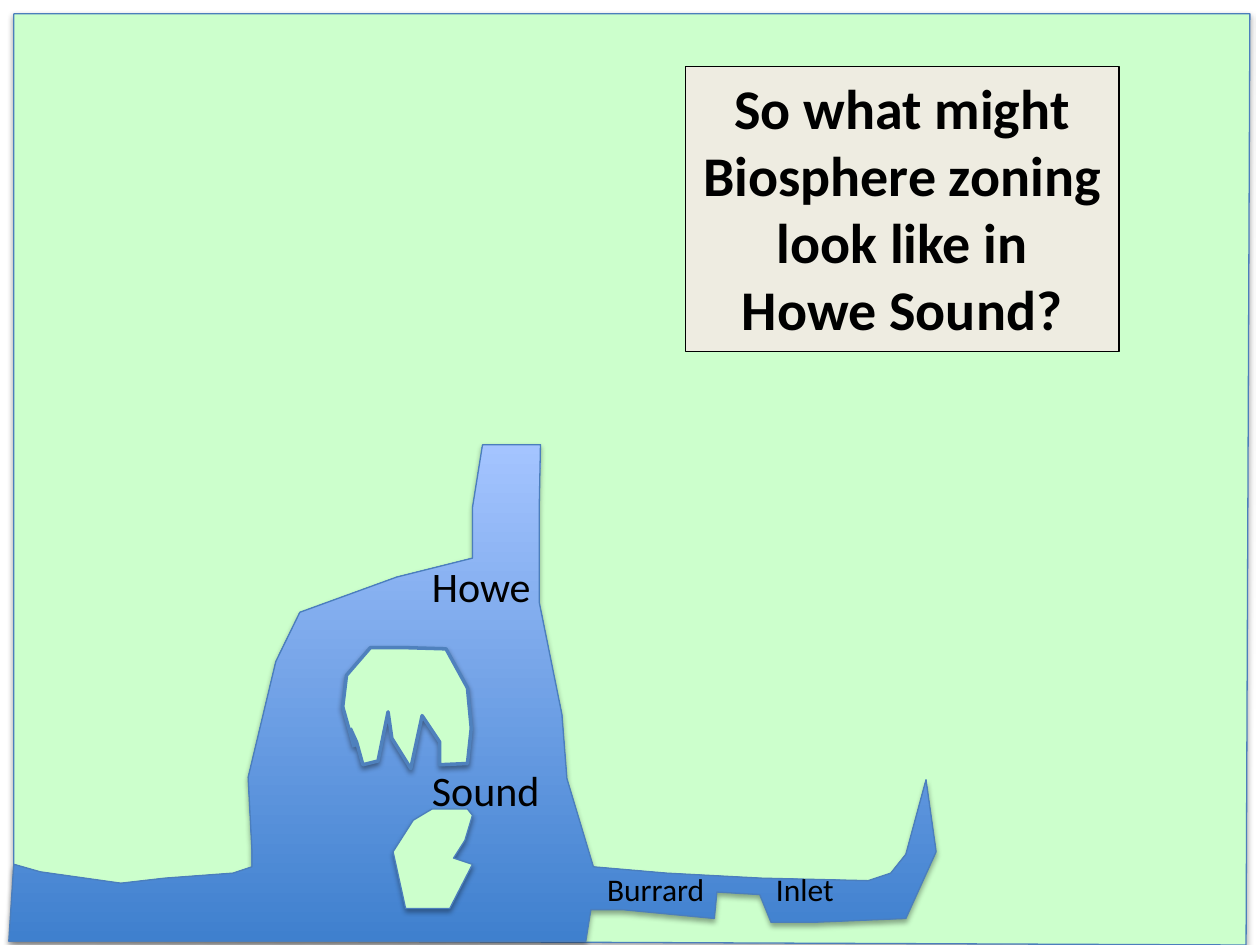
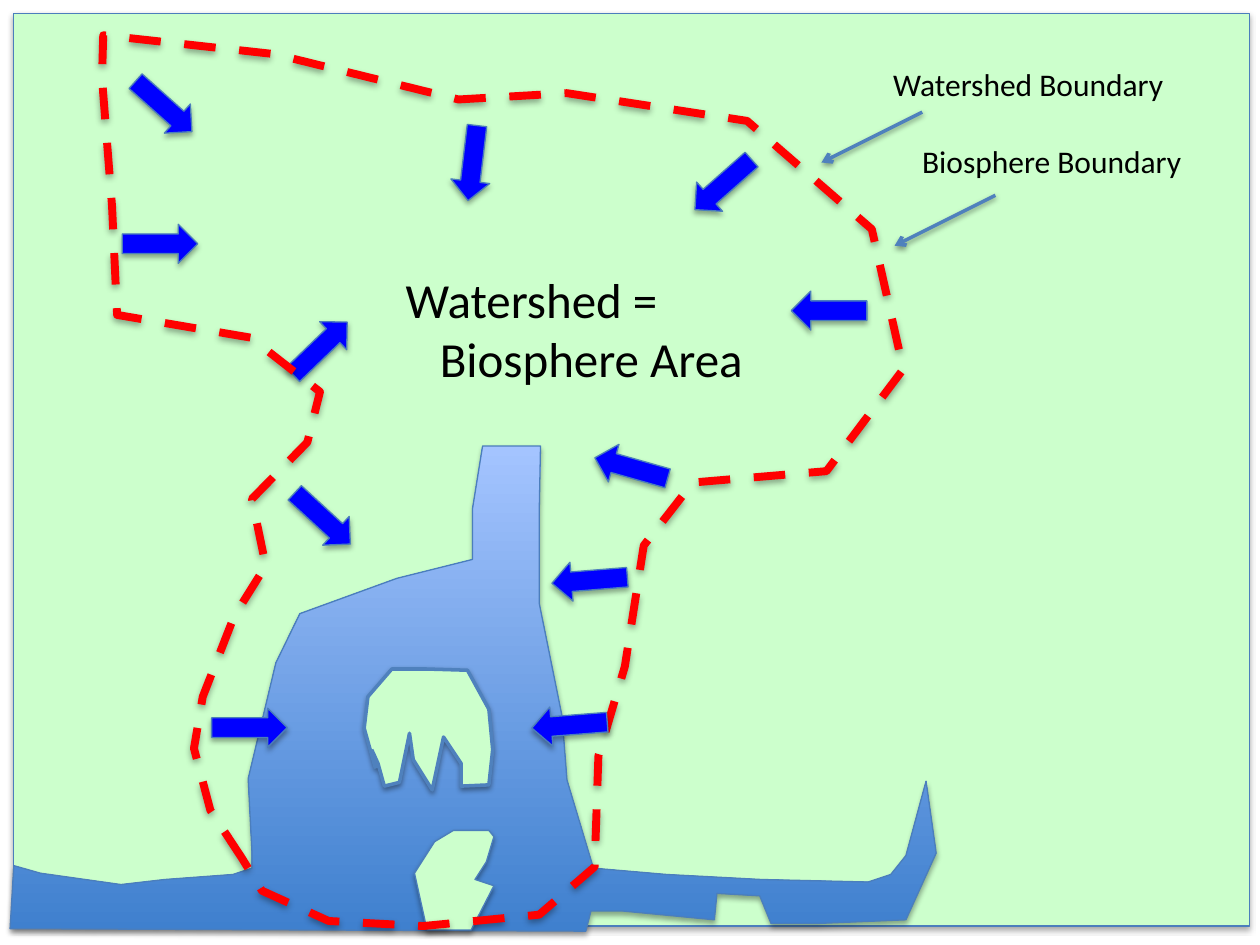
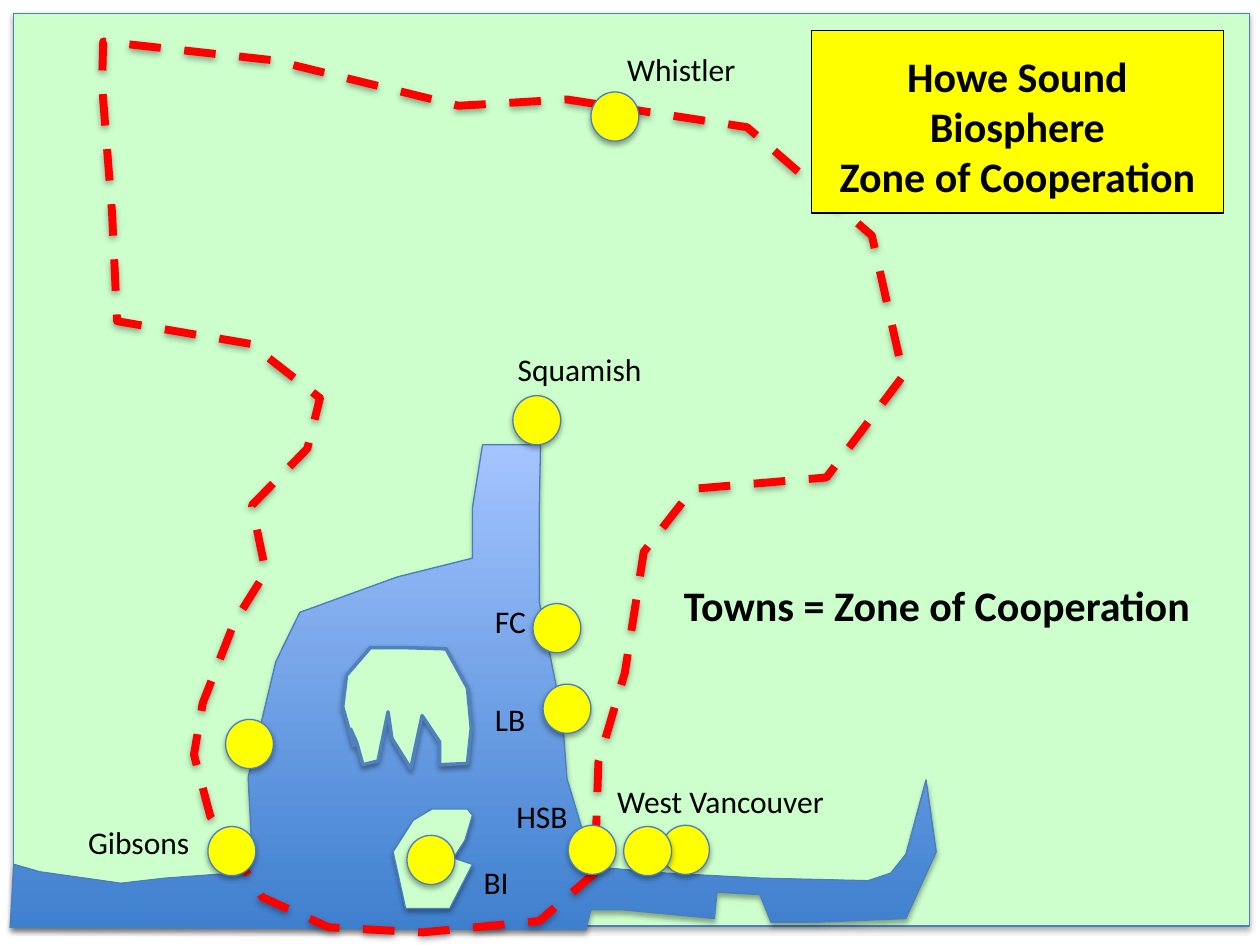
from pptx import Presentation
from pptx.dml.color import RGBColor
from pptx.enum.dml import MSO_LINE
from pptx.enum.shapes import MSO_CONNECTOR, MSO_SHAPE
from pptx.enum.text import MSO_ANCHOR, MSO_AUTO_SIZE, PP_ALIGN
from pptx.oxml import parse_xml
from pptx.oxml.ns import nsdecls
from pptx.util import Cm, Pt

RECT, OVAL, ARROW = MSO_SHAPE.RECTANGLE, MSO_SHAPE.OVAL, MSO_SHAPE.RIGHT_ARROW
LEFT, MID = PP_ALIGN.LEFT, PP_ALIGN.CENTER
TOP, FIXED = MSO_ANCHOR.TOP, MSO_AUTO_SIZE.NONE
STRAIGHT, DASH = MSO_CONNECTOR.STRAIGHT, MSO_LINE.DASH

FONT = "Calibri"
UNIT = 2.54
STEP = Cm(UNIT / 100)
COLORS = {
    "land": "CCFFCC", "deep": "3F80CE", "light": "A4C4FF", "edge": "4B7EBC",
    "coast": "4F81BD", "flow": "0000FF", "bound": "FF0000", "town": "FFFF00",
    "card": "EEECE1", "ink": "000000",
}

# Outlines in hundredths of a map unit
SHORE = [
    (32, 692), (96, 701), (131, 697), (185, 693), (200, 688), (200, 675),
    (197, 617), (219, 525), (238, 486), (315, 458), (375, 443), (375, 403),
    (383, 353), (429, 353), (428, 403), (428, 478), (446, 567), (450, 618),
    (471, 688), (529, 693), (604, 697), (689, 699), (707, 693), (719, 678),
    (735, 619), (743, 676), (719, 729), (647, 732), (612, 732), (603, 710),
    (569, 708), (567, 729), (494, 722), (469, 722),
]
MOUTH = [(465, 738), (8, 736), (11, 686)]
LOW_MOUTH = [(465, 747), (7, 747), (11, 686)]
NORTH_ISLE = [
    (281, 593), (272, 561), (275, 536), (294, 514), (321, 514), (354, 515),
    (371, 546), (374, 578), (371, 606), (349, 607), (349, 589), (335, 568),
    (326, 610), (311, 586), (308, 565), (300, 604), (288, 607), (283, 589),
    (278, 578),
]
SOUTH_ISLE = [
    (371, 642), (343, 642), (328, 651), (312, 676), (322, 721), (357, 721),
    (375, 686), (360, 681), (369, 667), (375, 647),
]
BOUND = [
    (192, 681), (167, 643), (154, 594), (161, 553), (186, 489), (211, 449),
    (200, 396), (244, 351), (254, 311), (199, 268), (93, 250), (89, 164),
    (81, 62), (82, 28), (218, 43), (364, 79), (450, 74), (593, 96),
    (692, 182), (717, 293), (656, 374), (550, 383), (511, 433), (496, 529),
    (475, 600), (472, 688), (428, 726), (336, 735), (261, 731), (208, 707),
]
SLOPED = [(11, 11), (992, 11), (989, 750), (11, 746)]
LAND = (0.11, 0.11, 9.81, 7.24)
FLOWS = [
    (2.24, 2.61, 316), (0.97, 1.78, 0), (1, 0.69, 41.8), (5.44, 1.31, 138.5),
    (6.28, 2.31, 180), (4.71, 3.56, 195.8), (4.38, 4.45, 175.4),
    (3.45, 1.14, 96.8), (2.26, 3.96, 42.6),
]
SOUND_FLOWS = [(4.22, 5.6, 175.5), (1.68, 5.62, 0)]
TOWNS = [
    (4.51, 6.55), (4.07, 3.14), (4.31, 5.43), (1.79, 5.71), (1.65, 6.56),
    (4.69, 0.73), (4.23, 4.79), (5.25, 6.55), (4.95, 6.56), (3.23, 6.63),
]
NAMES = [
    ("Squamish", 4.01, 2.73, 1.2), ("Whistler", 4.88, 0.35, 1.07),
    ("Gibsons", 0.6, 6.48, 1.02), ("HSB", 4, 6.28, 0.61),
    ("FC", 3.83, 4.73, 0.45), ("LB", 3.83, 5.51, 0.45),
    ("BI", 3.74, 6.8, 0.4), ("West Vancouver", 4.8, 6.16, 1.89),
]


def span(*values):
    """Turn map units into lengths."""
    return [Cm(value * UNIT) for value in values]


def color(name):
    """Look up a colour by its role."""
    return RGBColor.from_string(COLORS[name])


def shade(shape, alpha=35, drop=1.8):
    """Give a shape its soft shadow."""
    shape._element.spPr.append(parse_xml(
        f'<a:effectLst {nsdecls("a")}><a:outerShdw blurRad="{Pt(3.1)}" '
        f'dist="{Pt(drop)}" dir="5400000" rotWithShape="0">'
        f'<a:srgbClr val="{COLORS["ink"]}"><a:alpha val="{alpha * 1000}"/>'
        "</a:srgbClr></a:outerShdw></a:effectLst>"))


def stroke(shape, name="edge", width=0.75):
    """Set the colour and width of a line."""
    shape.line.color.rgb = color(name)
    shape.line.width = Pt(width)


def paint(shape, name):
    """Set a plain fill."""
    shape.fill.solid()
    shape.fill.fore_color.rgb = color(name)


def trace(slide, points, shift=(0, 0), close=True):
    """Build an outline moved by a shift."""
    maker = slide.shapes.build_freeform(*points[0], scale=STEP)
    maker.add_line_segments(points[1:], close=close)
    return maker.convert_to_shape(*span(*shift))


def stamp(slide, kind, box, name, turn=0):
    """Add a filled preset shape with a shadow."""
    shape = slide.shapes.add_shape(kind, *span(*box))
    shape.rotation = turn
    paint(shape, name)
    stroke(shape)
    shade(shape)


def write(frame, lines, size, bold=False, align=LEFT, indent=0, gap=0):
    """Fill a frame; later lines take the indent and gap."""
    frame.auto_size = FIXED
    frame.vertical_anchor = TOP
    frame.text = "\n".join(lines)
    for index, para in enumerate(frame.paragraphs):
        para.alignment = align
        if index:
            para.space_before = Pt(gap)
            para._p.get_or_add_pPr().set("marL", str(span(indent)[0]))
        for run in para.runs:
            run.font.name = FONT
            run.font.size = Pt(size)
            run.font.bold = bold
            run.font.color.rgb = color("ink")


def label(slide, lines, box, size=18, wrap=False, **style):
    """Add a text box and return its frame."""
    frame = slide.shapes.add_textbox(*span(*box)).text_frame
    frame.word_wrap = wrap
    write(frame, lines, size, **style)
    return frame


def title(slide, lines, box, size, fill=None, **style):
    """Bring the title forward and set it in its box."""
    shape = slide.shapes.title
    slide.shapes._spTree.append(shape._element)
    shape.left, shape.top, shape.width, shape.height = span(*box)
    shape.text_frame.word_wrap = fill is not None
    write(shape.text_frame, lines, size, **style)
    if fill:
        paint(shape, fill)
        stroke(shape, "ink")
    return shape.text_frame


def water(slide, mouth=MOUTH, shift=(0, 0)):
    """Draw the sound and the inlet."""
    shape = trace(slide, SHORE + mouth, shift)
    shape.fill.gradient()
    shape.fill.gradient_angle = 90
    for stop, name in zip(shape.fill.gradient_stops, ("deep", "light")):
        stop.color.rgb = color(name)
    stroke(shape)
    shade(shape)


def isles(slide, shift=(0, 0)):
    """Draw both islands."""
    north = trace(slide, NORTH_ISLE, shift, close=False)
    paint(north, "land")
    stroke(north, "coast", 2)
    shade(north, 38, 1.6)
    south = trace(slide, SOUTH_ISLE, shift)
    paint(south, "land")
    stroke(south)
    shade(south)


def bound(slide, shift=(0, 0)):
    """Draw the dashed boundary."""
    shape = trace(slide, BOUND, shift)
    shape.fill.background()
    stroke(shape, "bound", 4.5)
    shape.line.dash_style = DASH
    shade(shape)


def flows(slide, spots):
    """Add the flow arrows."""
    for left, top, turn in spots:
        stamp(slide, ARROW, (left, top, 0.6, 0.31), "flow", turn)


def pointer(slide, left, top):
    """Add an arrow from a label down to the boundary."""
    line = slide.shapes.add_connector(
        STRAIGHT, *span(left, top, left - 0.8, top + 0.4))
    stroke(line, "coast", 2)
    line.line._get_or_add_ln().append(
        parse_xml(f'<a:tailEnd {nsdecls("a")} type="arrow"/>'))
    shade(line, 38, 1.6)


def intro(slide):
    """Build the opening map."""
    land = trace(slide, SLOPED)
    paint(land, "land")
    stroke(land)
    shade(land)
    water(slide, LOW_MOUTH)
    isles(slide)
    label(slide, ["Howe", "Sound"], (3.33, 4.4, 1.06, 2.12), 24, gap=88)
    frame = label(slide, ["Burrard\tInlet"], (4.72, 6.86, 2.03, 0.4))
    frame.paragraphs[0]._p.get_or_add_pPr().append(parse_xml(
        f'<a:tabLst {nsdecls("a")}><a:tab pos="{span(1.34)[0]}" algn="l"/>'
        "</a:tabLst>"))
    title(slide, ["So what might", "Biosphere zoning look like in", "Howe Sound?"],
          (5.44, 0.53, 3.44, 2.26), 32, "card", bold=True, align=MID)


def basin(slide):
    """Build the watershed map."""
    stamp(slide, RECT, LAND, "land")
    flows(slide, FLOWS)
    title(slide, ["Watershed =", "Biosphere Area"], (3.12, 2.09, 2.91, 1.04), 28,
          indent=0.27)
    water(slide, shift=(0, 0.01))
    isles(slide, (0.17, 0.17))
    bound(slide)
    flows(slide, SOUND_FLOWS)
    label(slide, ["Watershed Boundary", "Biosphere Boundary"],
          (6.99, 0.47, 2.51, 1.01), indent=0.23, gap=22)
    pointer(slide, 7.32, 0.89)
    pointer(slide, 7.9, 1.55)


def towns(slide):
    """Build the map of towns."""
    stamp(slide, RECT, LAND, "land")
    water(slide)
    isles(slide)
    bound(slide, (0, 0.05))
    for left, top in TOWNS:
        stamp(slide, OVAL, (left, top, 0.38, 0.39), "town")
    for name, left, top, width in NAMES:
        label(slide, [name], (left, top, width, 0.4))
    label(slide, ["Towns = Zone of Cooperation"], (5.33, 4.55, 4.49, 0.5), 24,
          wrap=True, bold=True)
    frame = title(slide, ["Howe Sound Biosphere", "Zone of Cooperation"],
                  (6.44, 0.24, 3.27, 1.45), 24, "town", bold=True, align=MID)
    frame.margin_top = Cm(0.4)


def main():
    """Build and save the deck."""
    deck = Presentation()
    deck.slide_width, deck.slide_height = span(10, 7.5)
    for build in (intro, basin, towns):
        build(deck.slides.add_slide(deck.slide_layouts[5]))
    deck.save("out.pptx")


if __name__ == "__main__":
    main()
